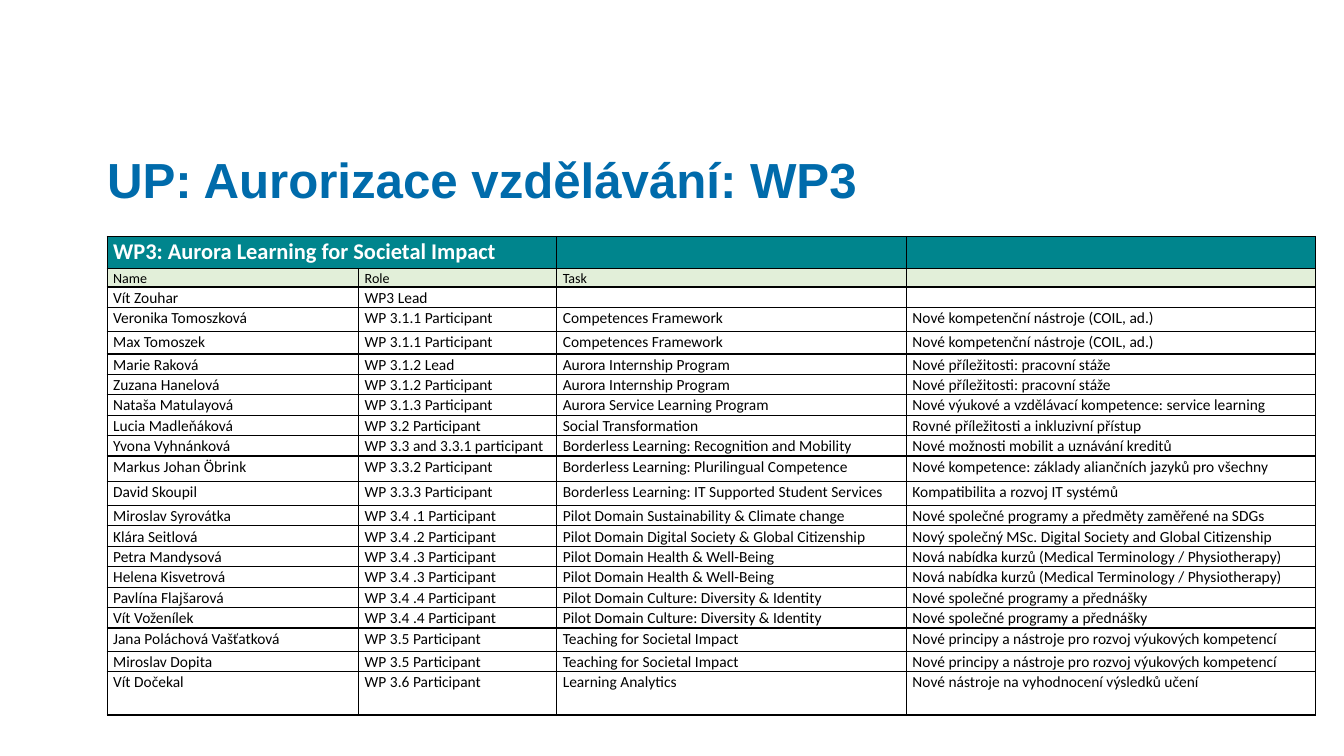
"""Build the slide listing the people, roles and tasks of work package WP3."""
from lxml import etree
from pptx import Presentation
from pptx import util as u
from pptx.dml.color import RGBColor
from pptx.enum import text
from pptx.oxml.ns import qn

TITLE = "UP: Aurorizace vzdělávání: WP3"
BANNER = ("WP3: Aurora Learning for Societal Impact", "", "", "")
HEADINGS = ("Name", "Role", "Task", "")
PEOPLE = [
    ("Vít Zouhar", "WP3 Lead", "", ""),
    ("Veronika Tomoszková", "WP 3.1.1 Participant", "Competences Framework",
     "Nové kompetenční nástroje (COIL, ad.)"),
    ("Max Tomoszek", "WP 3.1.1 Participant", "Competences Framework",
     "Nové kompetenční nástroje (COIL, ad.)"),
    ("Marie Raková", "WP 3.1.2 Lead", "Aurora Internship Program",
     "Nové příležitosti: pracovní stáže"),
    ("Zuzana Hanelová", "WP 3.1.2 Participant", "Aurora Internship Program",
     "Nové příležitosti: pracovní stáže"),
    ("Nataša Matulayová", "WP 3.1.3 Participant", "Aurora Service Learning Program",
     "Nové výukové a vzdělávací kompetence: service learning"),
    ("Lucia Madleňáková", "WP 3.2 Participant", "Social Transformation",
     "Rovné příležitosti a inkluzivní přístup"),
    ("Yvona Vyhnánková", "WP 3.3 and 3.3.1 participant",
     "Borderless Learning: Recognition and Mobility",
     "Nové možnosti mobilit a uznávání kreditů"),
    ("Markus Johan Öbrink", "WP 3.3.2 Participant",
     "Borderless Learning: Plurilingual Competence",
     "Nové kompetence: základy aliančních jazyků pro všechny"),
    ("David Skoupil", "WP 3.3.3 Participant",
     "Borderless Learning: IT Supported Student Services",
     "Kompatibilita a rozvoj IT systémů"),
    ("Miroslav Syrovátka", "WP 3.4 .1 Participant",
     "Pilot Domain Sustainability & Climate change",
     "Nové společné programy a předměty zaměřené na SDGs"),
    ("Klára Seitlová", "WP 3.4 .2 Participant",
     "Pilot Domain Digital Society & Global Citizenship",
     "Nový společný MSc. Digital Society and Global Citizenship"),
    ("Petra Mandysová", "WP 3.4 .3 Participant", "Pilot Domain Health & Well-Being",
     "Nová nabídka kurzů (Medical Terminology / Physiotherapy)"),
    ("Helena Kisvetrová", "WP 3.4 .3 Participant", "Pilot Domain Health & Well-Being",
     "Nová nabídka kurzů (Medical Terminology / Physiotherapy)"),
    ("Pavlína Flajšarová", "WP 3.4 .4 Participant",
     "Pilot Domain Culture: Diversity & Identity", "Nové společné programy a přednášky"),
    ("Vít Voženílek", "WP 3.4 .4 Participant",
     "Pilot Domain Culture: Diversity & Identity", "Nové společné programy a přednášky"),
    ("Jana Poláchová Vašťatková", "WP 3.5 Participant", "Teaching for Societal Impact",
     "Nové principy a nástroje pro rozvoj výukových kompetencí"),
    ("Miroslav Dopita", "WP 3.5 Participant", "Teaching for Societal Impact",
     "Nové principy a nástroje pro rozvoj výukových kompetencí"),
    ("Vít Dočekal", "WP 3.6 Participant", "Learning Analytics",
     "Nové nástroje na vyhodnocení výsledků učení"),
]

BLUE = RGBColor(0x00, 0x6B, 0xAB)
TEAL = RGBColor(0x00, 0x85, 0x8D)
PALE_GREEN = RGBColor(0xE2, 0xEF, 0xD9)
WHITE = RGBColor(0xFF, 0xFF, 0xFF)
BLACK = RGBColor(0x00, 0x00, 0x00)

SLIDE_WIDTH, SLIDE_HEIGHT = 13.3, 7.48
LEFT, TABLE_TOP = 1.06, 2.34
TITLE_TOP, TITLE_WIDTH, TITLE_HEIGHT = 1.45, 11.17, 0.64
COLUMN_WIDTHS = (2.49, 1.96, 3.46, 4.05)
ROW_HEIGHT = 0.19
SPECIAL_HEIGHTS = {0: 0.32, 1: 0.18, 3: 0.24, 4: 0.22, 10: 0.25, 11: 0.24,
                   18: 0.23, 20: 0.43}
BANNER_STYLE = dict(size=16, color=WHITE, bold=True)
HEADING_STYLE = dict(size=10, color=BLACK)
BODY_STYLE = dict(size=11, color=BLACK)


def write(frame, content, size, color, name="Calibri", bold=False, spacing=1.07):
    """Put one formatted line into a text frame, sizing it even when empty."""
    paragraph = frame.paragraphs[0]
    paragraph.alignment = text.PP_ALIGN.LEFT
    paragraph.line_spacing = spacing
    if content:
        run = paragraph.add_run()
        run.text = content
        run.font.size = u.Pt(size)
        run.font.name = name
        run.font.bold = bold
        run.font.color.rgb = color
    else:
        etree.SubElement(paragraph._p, qn("a:endParaRPr"), sz=str(size * 100))


def add_borders(cell):
    """Draw a one-point black line on each side of a cell, ahead of its fill."""
    properties = cell._tc.get_or_add_tcPr()
    for index, side in enumerate(("lnL", "lnR", "lnT", "lnB")):
        line = etree.Element(qn(f"a:{side}"), w=str(u.Pt(1)))
        fill = etree.SubElement(line, qn("a:solidFill"))
        etree.SubElement(fill, qn("a:srgbClr"), val=str(BLACK))
        properties.insert(index, line)


def add_title(slide):
    """Place and format the title placeholder."""
    title = slide.shapes.title
    title.left, title.top = u.Inches(LEFT), u.Inches(TITLE_TOP)
    title.width, title.height = u.Inches(TITLE_WIDTH), u.Inches(TITLE_HEIGHT)
    frame = title.text_frame
    frame.margin_left = frame.margin_right = frame.margin_top = frame.margin_bottom = 0
    frame.vertical_anchor = text.MSO_ANCHOR.MIDDLE
    frame.auto_size = text.MSO_AUTO_SIZE.NONE
    write(frame, TITLE, size=35.1, color=BLUE, name="Arial", bold=True, spacing=1.0)


def add_people_table(slide):
    """Add the table with its banner, headings and one row per person."""
    rows = [(BANNER, TEAL, BANNER_STYLE), (HEADINGS, PALE_GREEN, HEADING_STYLE)]
    rows += [(person, WHITE, BODY_STYLE) for person in PEOPLE]
    heights = [SPECIAL_HEIGHTS.get(index, ROW_HEIGHT) for index in range(len(rows))]
    table = slide.shapes.add_table(
        len(rows), len(COLUMN_WIDTHS), u.Inches(LEFT), u.Inches(TABLE_TOP),
        u.Inches(sum(COLUMN_WIDTHS)), u.Inches(sum(heights))).table
    for column, width in zip(table.columns, COLUMN_WIDTHS):
        column.width = u.Inches(width)
    for row, height, (values, fill, style) in zip(table.rows, heights, rows):
        row.height = u.Inches(height)
        for cell, value in zip(row.cells, values):
            cell.margin_left = cell.margin_right = u.Inches(0.06)
            cell.margin_top = cell.margin_bottom = 0
            cell.fill.solid()
            cell.fill.fore_color.rgb = fill
            add_borders(cell)
            write(cell.text_frame, value, **style)
    table.cell(0, 0).merge(table.cell(0, 1))


def main():
    """Create and save the presentation."""
    presentation = Presentation()
    presentation.slide_width = u.Inches(SLIDE_WIDTH)
    presentation.slide_height = u.Inches(SLIDE_HEIGHT)
    slide = presentation.slides.add_slide(presentation.slide_layouts[5])
    add_title(slide)
    add_people_table(slide)
    presentation.save("out.pptx")


if __name__ == "__main__":
    main()
